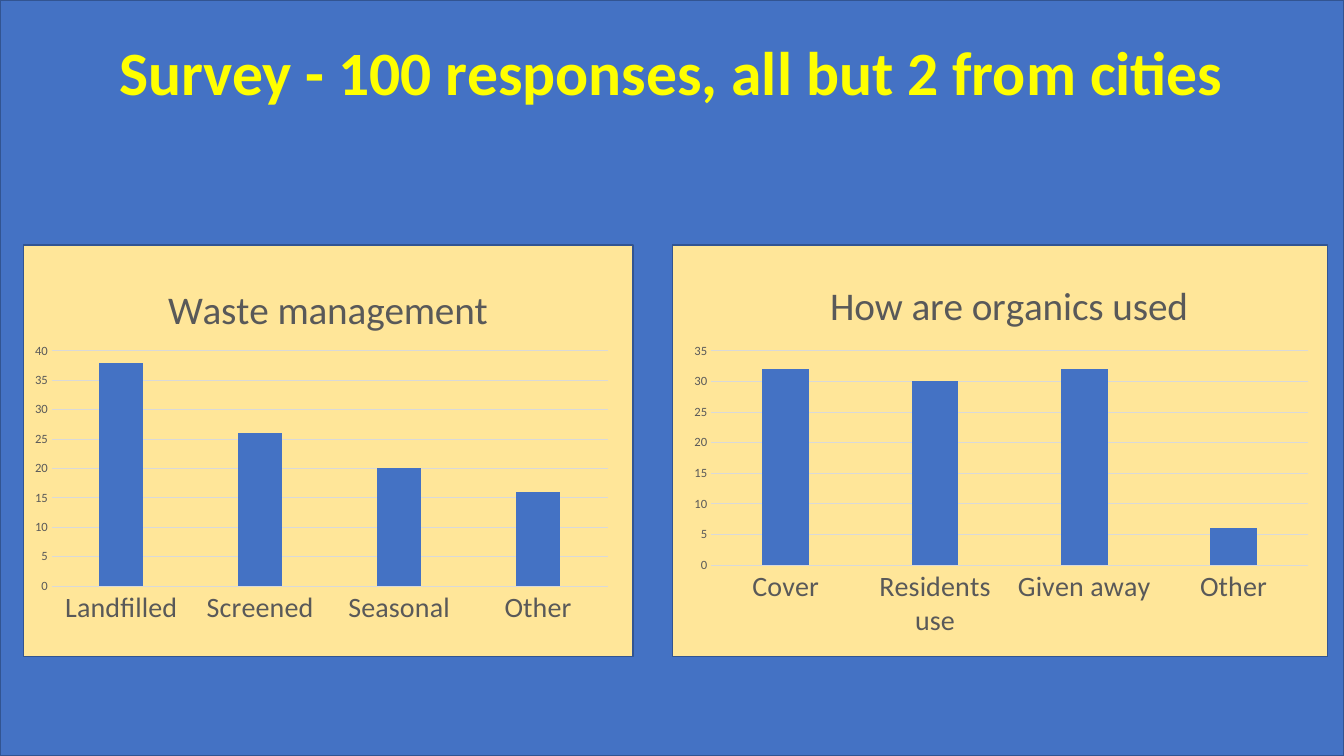
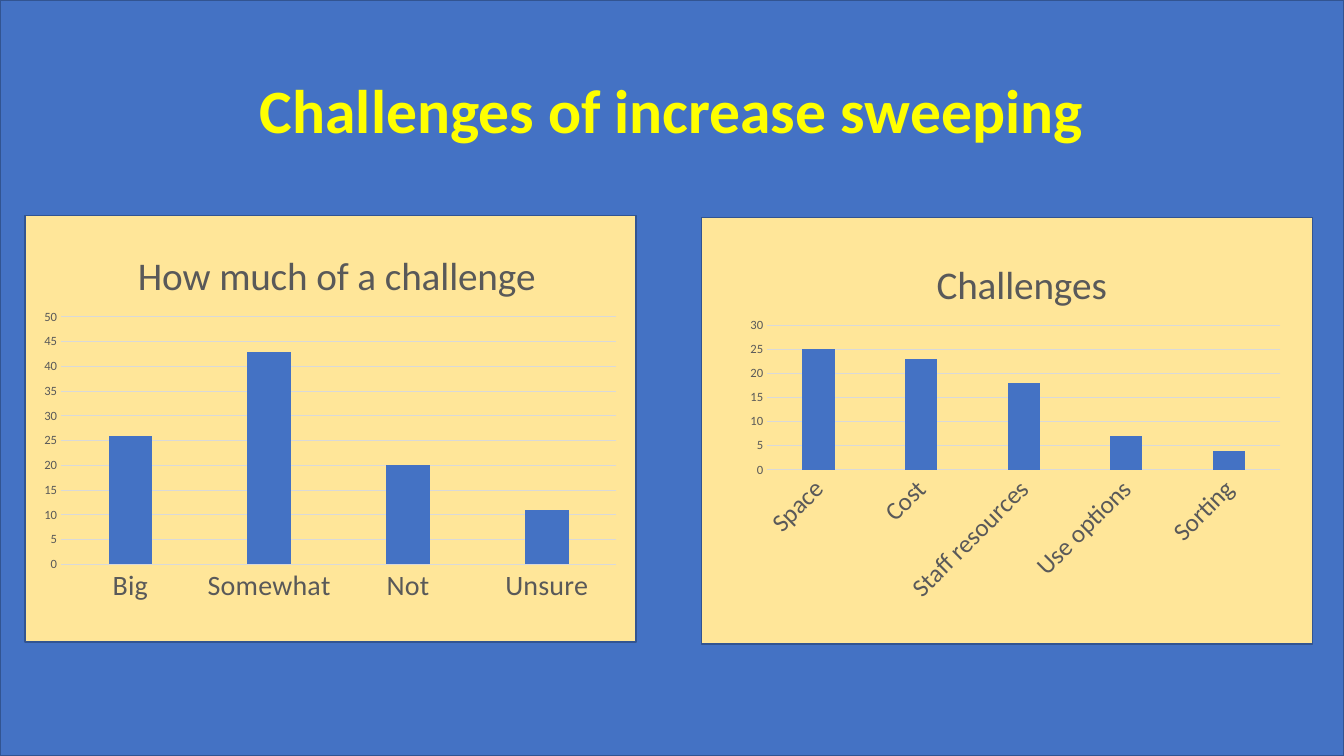
"""Build two survey slides, each with a pair of column charts on cards."""
from lxml.etree import SubElement
from pptx import Presentation
from pptx.chart.data import CategoryChartData
from pptx.dml.color import RGBColor
from pptx.enum.chart import XL_CHART_TYPE as ChartType, XL_TICK_MARK as Tick
from pptx.enum.shapes import MSO_SHAPE as Preset
from pptx.enum.text import MSO_ANCHOR as Anchor, PP_ALIGN as Align
from pptx.oxml.ns import qn
from pptx.util import Pt

WIDTH, HEIGHT = 960, 540
FONT = "Calibri"
BLUE, EDGE, CARD = "4472C4", "325491", "FFE699"
YELLOW, GRAY, RULE = "FFFF00", "595959", "D9D9D9"
HEADING = {"size": Pt(44), "bold": True, "name": FONT}

SLIDES = [
    {"title": "Survey - 100 responses, all but 2 from cities", "title_top": 2, "charts": [
        {"title": "Waste management", "title_at": (115, 197),
         "card": (16.6, 175, 435.6, 293.8), "frame": (16.6, 180, 424.8, 271.4),
         "plot": (37, 250.7, 397, 168), "top_value": 40, "label_size": 20, "angle": 0,
         "values": {"Landfilled": 38, "Screened": 26, "Seasonal": 20, "Other": 16}},
        {"title": "How are organics used", "title_at": (588, 194.5),
         "card": (480.2, 175, 468, 293.8), "frame": (486.7, 180, 456.5, 281.5),
         "plot": (508, 250.7, 426.5, 153), "top_value": 35, "label_size": 20, "angle": 0,
         "values": {"Cover": 32, "Residents use": 30, "Given away": 32, "Other": 6}},
    ]},
    {"title": "Challenges of increase sweeping", "title_top": 28.8, "charts": [
        {"title": "How much of a challenge", "title_at": (93.5, 173),
         "card": (18, 154, 436.3, 304.6), "frame": (23, 155.5, 425.5, 280.8),
         "plot": (43.6, 226.4, 396.6, 176.8), "top_value": 50, "label_size": 20, "angle": 0,
         "values": {"Big": 26, "Somewhat": 43, "Not": 20, "Unsure": 11}},
        {"title": "Challenges", "title_at": (664, 179.5),
         "card": (501.1, 155.5, 436.3, 304.6), "frame": (528.5, 162, 393.1, 275),
         "plot": (548, 232.2, 366.5, 103.5), "top_value": 30, "label_size": 18, "angle": -45,
         "values": {"Space": 25, "Cost": 23, "Staff resources": 18,
                    "Use options": 7, "Sorting": 4}},
    ]},
]


def color(hex_value):
    return RGBColor.from_string(hex_value)


def points(box):
    return [Pt(length) for length in box]


def style(target, values):
    for name, value in values.items():
        setattr(target, name, value)


def paint_line(line, hex_value, width):
    line.color.rgb = color(hex_value)
    line.width = Pt(width)


def style_font(font, size):
    style(font, {"size": Pt(size), "bold": False, "name": FONT})
    font.color.rgb = color(GRAY)


def add_panel(page, box, fill):
    panel = page.shapes.add_shape(Preset.RECTANGLE, *points(box))
    panel.shadow.inherit = False
    panel.fill.solid()
    panel.fill.fore_color.rgb = color(fill)
    paint_line(panel.line, EDGE, 1)


def add_title(page, text, top):
    box = page.shapes.add_textbox(*points((66, top, 828, 104.4)))
    style(box.text_frame, {"word_wrap": True, "vertical_anchor": Anchor.MIDDLE})
    para = box.text_frame.paragraphs[0]
    style(para, {"alignment": Align.CENTER, "line_spacing": 0.9})
    span = para.add_run()
    span.text = text
    style(span.font, HEADING)
    span.font.color.rgb = color(YELLOW)


def place(layout, frame, box, inner=False):
    """Pin a chart part at a slide position, as fractions of the chart frame."""
    left, top, width, height = frame
    manual = SubElement(layout, qn("c:manualLayout"))
    settings = [("layoutTarget", "inner")] if inner else []
    settings += [("xMode", "edge"), ("yMode", "edge")]
    settings += [("x", (box[0] - left) / width), ("y", (box[1] - top) / height)]
    if inner:
        settings += [("w", box[2] / width), ("h", box[3] / height)]
    for name, value in settings:
        SubElement(manual, qn(f"c:{name}")).set("val", str(value))


def style_axes(chart, item):
    labels, scale = chart.category_axis, chart.value_axis
    for axis, size in ((labels, item["label_size"]), (scale, 9)):
        style(axis, {"major_tick_mark": Tick.NONE, "minor_tick_mark": Tick.NONE})
        style_font(axis.tick_labels.font, size)
    paint_line(labels.format.line, RULE, 0.75)
    body = labels.tick_labels.font._element.getparent().getparent().getparent().find(qn("a:bodyPr"))
    body.set("rot", str(item["angle"] * 60000))
    style(scale, {"minimum_scale": 0, "maximum_scale": item["top_value"],
                  "major_unit": 5, "has_major_gridlines": True})
    scale.format.line.fill.background()
    paint_line(scale.major_gridlines.format.line, RULE, 0.75)


def add_column_chart(page, item):
    data = CategoryChartData()
    data.categories = list(item["values"])
    data.add_series("Series 1", list(item["values"].values()))
    frame = item["frame"]
    chart = page.shapes.add_chart(ChartType.COLUMN_CLUSTERED, *points(frame), data).chart
    style(chart, {"has_legend": False, "has_title": True})
    style(chart.font, {"size": Pt(10), "name": FONT})

    title = chart.chart_title
    title.include_in_layout = False
    span = title.text_frame.paragraphs[0].add_run()
    span.text = item["title"]
    style_font(span.font, 28)
    title_xml = title._element
    layout = title_xml.find(qn("c:layout"))
    if layout is None:
        layout = SubElement(title_xml, qn("c:layout"))
        title_xml.find(qn("c:tx")).addnext(layout)
    place(layout, frame, item["title_at"])

    plot_xml = chart._chartSpace.chart.plotArea
    layout = plot_xml.find(qn("c:layout"))
    if layout is None:
        layout = SubElement(plot_xml, qn("c:layout"))
        plot_xml.insert(0, layout)
    place(layout, frame, item["plot"], inner=True)

    plot = chart.plots[0]
    style(plot, {"gap_width": 219, "overlap": -27, "vary_by_categories": False})
    fill = plot.series[0].format.fill
    fill.solid()
    fill.fore_color.rgb = color(BLUE)
    style_axes(chart, item)


def main():
    deck = Presentation()
    style(deck, {"slide_width": Pt(WIDTH), "slide_height": Pt(HEIGHT)})
    for content in SLIDES:
        page = deck.slides.add_slide(deck.slide_layouts[6])
        add_panel(page, (0, 0, WIDTH, HEIGHT), BLUE)
        add_title(page, content["title"], content["title_top"])
        for item in content["charts"]:
            add_panel(page, item["card"], CARD)
            add_column_chart(page, item)
    deck.save("out.pptx")


if __name__ == "__main__":
    main()
